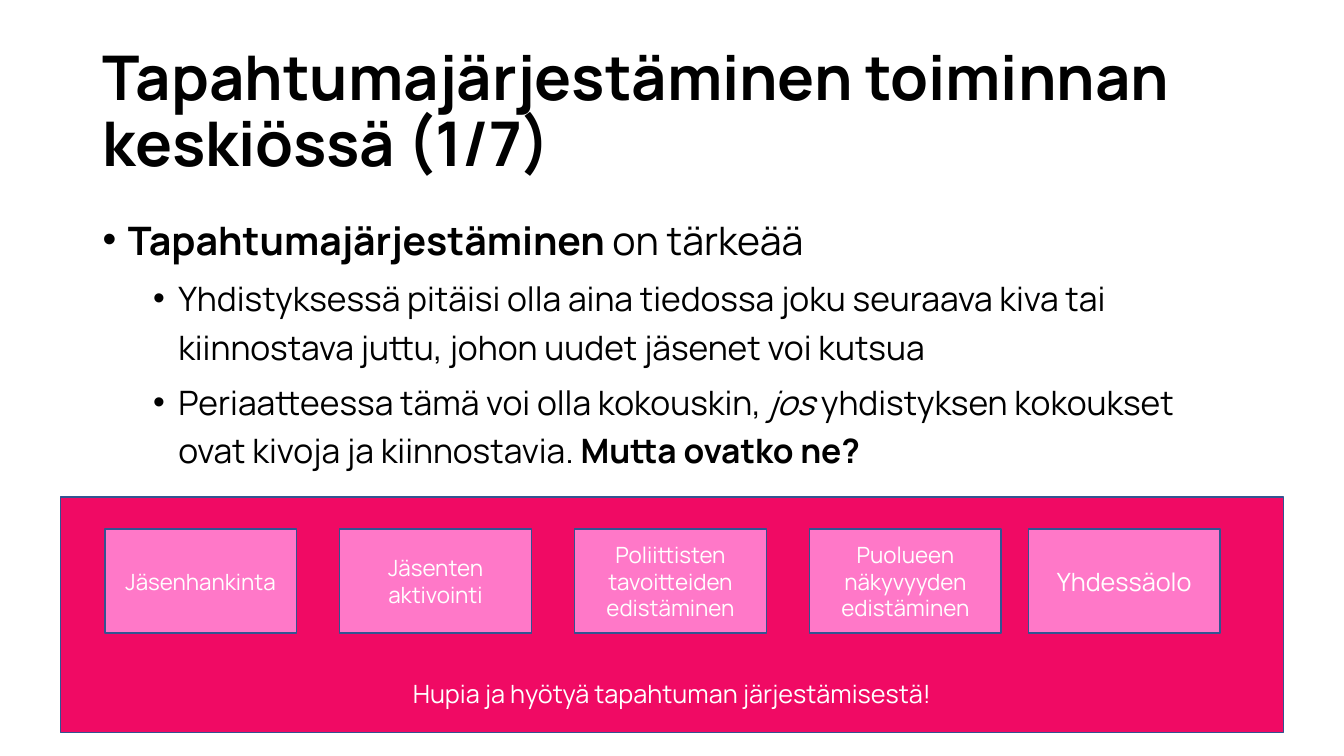
from lxml import etree
from pptx import Presentation
from pptx.dml.color import RGBColor
from pptx.enum.shapes import MSO_SHAPE
from pptx.enum.text import MSO_ANCHOR, PP_ALIGN
from pptx.oxml.ns import qn
from pptx.util import Inches, Pt

RECT = MSO_SHAPE.RECTANGLE
MIDDLE, BOTTOM = MSO_ANCHOR.MIDDLE, MSO_ANCHOR.BOTTOM
CENTER = PP_ALIGN.CENTER

FONT = "Manrope"
BLACK, WHITE = "000000", "FFFFFF"
PANEL_FILL, CARD_FILL, OUTLINE = "F00A64", "FF78C8", "325491"

TITLE = "Tapahtumajärjestäminen toiminnan keskiössä (1/7)"
# Each bullet: level, then runs of (text, font attributes)
BULLETS = [
    (0, [("Tapahtumajärjestäminen ", {"bold": True}), ("on tärkeää", {})]),
    (1, [("Yhdistyksessä pitäisi olla aina tiedossa joku seuraava kiva tai "
          "kiinnostava juttu, johon uudet jäsenet voi kutsua", {})]),
    (1, [("Periaatteessa tämä voi olla kokouskin, ", {}),
         ("jos", {"italic": True}),
         (" yhdistyksen kokoukset ovat kivoja ja kiinnostavia. ", {}),
         ("Mutta ovatko ne?", {"bold": True})]),
]
# Per level: text size, space before, left indent in inches
LEVELS = [(28, 10, 0.25), (24, 5, 0.75)]
HANGING = 0.25
CAPTION = "Hupia ja hyötyä tapahtuman järjestämisestä!"
CARDS = [
    ("Jäsenhankinta", 16),
    ("Jäsenten aktivointi", 16),
    ("Poliittisten tavoitteiden edistäminen", 16),
    ("Puolueen näkyvyyden edistäminen", 16),
    ("Yhdessäolo", 18),
]

TITLE_BOX = (0.92, 0.4, 11.5, 1.45)
BODY_BOX = (0.92, 2, 11.5, 4.76)
PANEL_BOX = (0.6, 4.93, 12.13, 2.34)
CARD_LEFT, CARD_TOP, CARD_W, CARD_H = 1.04, 5.25, 1.9, 1.03
CARD_PITCH = 2.33
LAST_CARD_LEFT = 10.2


def color(hex_value):
    return RGBColor.from_string(hex_value)


def add_run(p, text, size, hex_value, **attrs):
    r = p.add_run()
    r.text = text
    for name, value in {"name": FONT, "size": Pt(size), **attrs}.items():
        setattr(r.font, name, value)
    r.font.color.rgb = color(hex_value)


def add_text_box(s, box):
    tf = s.shapes.add_textbox(*map(Inches, box)).text_frame
    tf.word_wrap = True
    return tf


def add_block(s, box, fill, text, size, anchor=MIDDLE):
    """Outlined rectangle with centred white text."""
    sp = s.shapes.add_shape(RECT, *map(Inches, box))
    sp.shadow.inherit = False
    sp.fill.solid()
    sp.fill.fore_color.rgb = color(fill)
    sp.line.color.rgb = color(OUTLINE)
    sp.line.width = Pt(1)
    tf = sp.text_frame
    tf.word_wrap = True
    tf.vertical_anchor = anchor
    p = tf.paragraphs[0]
    p.alignment = CENTER
    add_run(p, text, size, WHITE)
    return tf


def set_bullet(p, indent):
    pPr = p._p.get_or_add_pPr()
    pPr.set("marL", str(Inches(indent)))
    pPr.set("indent", str(-Inches(HANGING)))
    etree.SubElement(pPr, qn("a:buFont"), typeface="Arial")
    etree.SubElement(pPr, qn("a:buChar"), char="•")


def main():
    prs = Presentation()
    prs.slide_width, prs.slide_height = Inches(13.33), Inches(7.5)
    s = prs.slides.add_slide(prs.slide_layouts[6])

    caption = add_block(s, PANEL_BOX, PANEL_FILL, CAPTION, 18, BOTTOM)
    caption.margin_bottom = Inches(0.24)

    title = add_text_box(s, TITLE_BOX)
    title.vertical_anchor = MIDDLE
    title.paragraphs[0].line_spacing = 0.9
    add_run(title.paragraphs[0], TITLE, 44, BLACK, bold=True)

    body = add_text_box(s, BODY_BOX)
    for i, (level, runs) in enumerate(BULLETS):
        size, before, indent = LEVELS[level]
        p = body.add_paragraph() if i else body.paragraphs[0]
        p.level = level
        p.line_spacing = 1.2
        p.space_before = Pt(before)
        set_bullet(p, indent)
        for text, attrs in runs:
            add_run(p, text, size, BLACK, **attrs)

    lefts = [CARD_LEFT + i * CARD_PITCH for i in range(len(CARDS) - 1)]
    for left, (text, size) in zip(lefts + [LAST_CARD_LEFT], CARDS):
        add_block(s, (left, CARD_TOP, CARD_W, CARD_H), CARD_FILL, text, size)

    prs.save("out.pptx")


if __name__ == "__main__":
    main()
